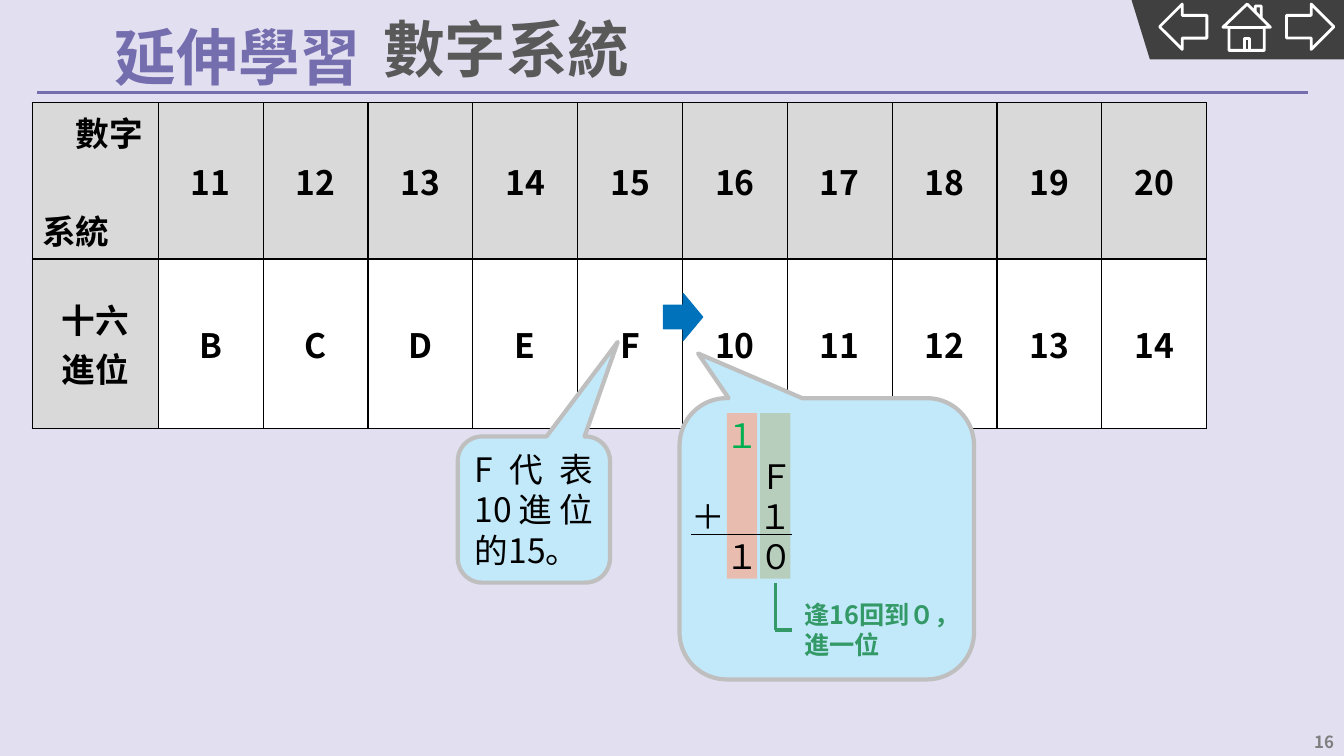
from dataclasses import dataclass
from typing import Any, Optional

from lxml.etree import SubElement
from pptx import Presentation
from pptx.dml.color import RGBColor
from pptx.enum.shapes import MSO_CONNECTOR, MSO_SHAPE
from pptx.enum.text import MSO_ANCHOR, MSO_AUTO_SIZE, PP_ALIGN
from pptx.oxml import parse_xml
from pptx.oxml.ns import nsdecls, qn
from pptx.util import Inches, Pt


@dataclass(frozen=True)
class Theme:
    font: str = "Noto Sans CJK SC"
    back: str = "E2E0F0"
    purple: str = "746DAE"
    title: str = "595959"
    page: str = "7F7F7F"
    dark: str = "404040"
    white: str = "FFFFFF"
    black: str = "000000"
    head: str = "D9D9D9"
    blue: str = "0072BC"
    sky: str = "C2E9FA"
    rim: str = "BFBFBF"
    pink: str = "E8BCAE"
    sage: str = "B8CEBD"
    green: str = "339966"
    carry: str = "00B050"
    big: float = 44
    body: float = 24
    note: float = 18
    small: float = 12


T = Theme()


@dataclass(frozen=True)
class Box:
    left: float
    top: float
    width: float
    height: float

    def emu(self) -> tuple:
        return tuple(Inches(v) for v in (self.left, self.top, self.width, self.height))


@dataclass(frozen=True)
class Form:
    kind: Any
    box: Box
    fill: Optional[str] = None
    line: Optional[str] = None
    weight: float = 0
    turn: float = 0
    flip: bool = False
    tune: tuple = ()


@dataclass(frozen=True)
class Rule:
    start: tuple
    end: tuple
    color: str


@dataclass(frozen=True)
class Line:
    text: str
    size: float = T.body
    color: str = T.black
    bold: bool = False
    under: bool = False
    align: Any = None
    indent: float = 0
    before: float = 0
    pitch: float = 0
    font: str = T.font


def rgb(code: str) -> RGBColor:
    return RGBColor.from_string(code)


def write(frame: Any, lines: list[Line], anchor: Any = MSO_ANCHOR.TOP) -> None:
    frame.word_wrap = True
    frame.vertical_anchor = anchor
    for i, item in enumerate(lines):
        para = frame.paragraphs[0] if i == 0 else frame.add_paragraph()
        para.text = item.text
        if item.indent:
            props = para._p.get_or_add_pPr()
            props.set("marL", str(Inches(item.indent)))
            props.set("indent", "0")
        if item.align is not None:
            para.alignment = item.align
        if item.before:
            para.space_before = Pt(item.before)
        if item.pitch:
            para.line_spacing = Pt(item.pitch)
        font = para.font
        font.size = Pt(item.size)
        font.bold = item.bold
        font.underline = item.under
        font.color.rgb = rgb(item.color)
        font.name = item.font
        style = para._p.pPr.find(qn("a:defRPr"))
        SubElement(style, qn("a:ea")).set("typeface", item.font)


def paint(shape: Any, fill: Optional[str], line: Optional[str], weight: float) -> None:
    shape.shadow.inherit = False
    if fill:
        shape.fill.solid()
        shape.fill.fore_color.rgb = rgb(fill)
    else:
        shape.fill.background()
    if line:
        shape.line.color.rgb = rgb(line)
        shape.line.width = Pt(weight)
    else:
        shape.line.fill.background()


def draw(slide: Any, form: Form) -> Any:
    shape = slide.shapes.add_shape(form.kind, *form.box.emu())
    for i, value in enumerate(form.tune):
        shape.adjustments[i] = value
    shape.rotation = form.turn
    if form.flip:
        shape._element.spPr.xfrm.set("flipV", "1")
    paint(shape, form.fill, form.line, form.weight)
    return shape


def stroke(slide: Any, rule: Rule) -> None:
    ends = [Inches(v) for v in rule.start + rule.end]
    line = slide.shapes.add_connector(MSO_CONNECTOR.STRAIGHT, *ends)
    line.line.color.rgb = rgb(rule.color)
    line.line.width = Pt(2.25)
    SubElement(line._element.spPr, qn("a:effectLst"))


def label(slide: Any, box: Box, lines: list[Line], anchor: Any = MSO_ANCHOR.TOP) -> Any:
    frame = slide.shapes.add_textbox(*box.emu()).text_frame
    write(frame, lines, anchor)
    return frame


def house(slide: Any) -> None:
    walls = [(12.37, 0.04), (12.45, 0.12), (12.45, 0.06), (12.51, 0.06), (12.51, 0.18),
             (12.6, 0.27), (12.54, 0.27), (12.54, 0.5), (12.19, 0.5), (12.19, 0.27),
             (12.13, 0.27), (12.37, 0.04)]
    parts = [walls, [(12.45, 0.12), (12.51, 0.18)], [(12.54, 0.27), (12.19, 0.27)],
             [(12.34, 0.5), (12.34, 0.38), (12.39, 0.38), (12.39, 0.5)]]
    pen = None
    for part in parts:
        first, *rest = [(Inches(x), Inches(y)) for x, y in part]
        if pen is None:
            pen = slide.shapes.build_freeform(*first)
        else:
            pen.move_to(*first)
        pen.add_line_segments(rest, close=part is walls)
    paint(pen.convert_to_shape(), None, T.white, 2)


def grid(slide: Any) -> None:
    heads = [str(n) for n in range(11, 21)]
    codes = [f"{n:X}" for n in range(11, 21)]
    box = Box(0.32, 1.02, 11.65, 3.23)
    table = slide.shapes.add_table(2, 11, *box.emu()).table
    table.first_row = table.horz_banding = False
    for i, col in enumerate(table.columns):
        col.width = Inches(1.04 if i else 1.25)
    for row, height in zip(table.rows, (1.55, 1.68)):
        row.height = Inches(height)
    mid = PP_ALIGN.CENTER
    corner = [Line("數字", bold=True, indent=0.33), Line("系統", bold=True, before=35)]
    side = [Line(text, bold=True, align=mid) for text in ("十六", "進位")]
    for r, (lead, texts) in enumerate(((corner, heads), (side, codes))):
        rows = [lead] + [[Line(text, bold=True, align=mid)] for text in texts]
        for c, lines in enumerate(rows):
            cell = table.cell(r, c)
            top = r == c == 0
            write(cell.text_frame, lines)
            cell.vertical_anchor = MSO_ANCHOR.TOP if top else MSO_ANCHOR.MIDDLE
            cell.fill.solid()
            cell.fill.fore_color.rgb = rgb(T.head if r == 0 or c == 0 else T.white)
            for i, edge in enumerate(("lnL", "lnR", "lnT", "lnB")):
                cell._tc.tcPr.insert(i, parse_xml(
                    f'<a:{edge} {nsdecls("a")} w="{Pt(1)}"><a:solidFill>'
                    f'<a:srgbClr val="{T.black}"/></a:solidFill></a:{edge}>'))


def main() -> None:
    deck = Presentation()
    deck.slide_width, deck.slide_height = Inches(13.33), Inches(7.5)
    slide = deck.slides.add_slide(deck.slide_layouts[5])
    slide.background.fill.solid()
    slide.background.fill.fore_color.rgb = rgb(T.back)

    draw(slide, Form(MSO_SHAPE.PARALLELOGRAM, Box(11.22, -0.01, 2.29, 0.6), T.dark,
                     turn=180, flip=True, tune=(0.308,)))
    for left, turn in ((11.5, 180), (12.76, 0)):
        draw(slide, Form(MSO_SHAPE.RIGHT_ARROW, Box(left, 0.04, 0.47, 0.45),
                         line=T.white, weight=2, turn=turn))
    house(slide)

    tag = label(slide, Box(1.04, 0.08, 2.79, 0.84),
                [Line("延伸學習", T.big, T.purple, True)], MSO_ANCHOR.BOTTOM)
    tag.margin_bottom = 0
    stroke(slide, Rule((0.37, 0.92), (12.97, 0.92), T.purple))
    title = slide.shapes.title
    title.left, title.top, title.width, title.height = Box(3.67, 0.05, 7.56, 0.92).emu()
    frame = title.text_frame
    frame.auto_size = MSO_AUTO_SIZE.NONE
    frame.margin_left = frame.margin_right = Inches(0.13)
    frame.margin_top, frame.margin_bottom = Inches(0.07), Inches(0.15)
    write(frame, [Line("數字系統", T.big, T.title, True, align=PP_ALIGN.LEFT)], MSO_ANCHOR.MIDDLE)
    label(slide, Box(12.9, 7.22, 0.43, 0.28),
          [Line("16", T.small, T.page, True, align=PP_ALIGN.RIGHT, font="Noto Sans CJK TC")],
          MSO_ANCHOR.MIDDLE)

    grid(slide)
    draw(slide, Form(MSO_SHAPE.DOWN_ARROW, Box(6.54, 2.95, 0.47, 0.39), T.blue, T.blue, 0.75, 270))

    bubble = MSO_SHAPE.ROUNDED_RECTANGULAR_CALLOUT
    sum_box = draw(slide, Form(bubble, Box(6.74, 3.95, 2.92, 2.79), T.sky, T.rim, 3,
                               tune=(-0.437, -0.659, 0.167)))
    sum_box.text_frame.margin_right = 0
    sum_box.text_frame.margin_bottom = Inches(0.06)
    write(sum_box.text_frame,
          [Line(text, T.note, T.green, True, align=PP_ALIGN.LEFT, indent=1, pitch=21.6)
           for text in ("逢16回到０，", "進一位")], MSO_ANCHOR.BOTTOM)
    for start, end in (((7.69, 5.78), (7.69, 6.25)), ((7.69, 6.25), (7.86, 6.25))):
        stroke(slide, Rule(start, end, T.green))
    for left, fill in ((7.21, T.pink), (7.54, T.sage)):
        draw(slide, Form(MSO_SHAPE.RECTANGLE, Box(left, 4.1, 0.3, 1.64), fill))
    label(slide, Box(6.43, 4.07, 1.56, 1.72), [
        Line("１", color=T.carry, indent=0.67, pitch=28.8),
        Line("Ｆ", indent=1, pitch=28.8),
        Line("＋　１", under=True, indent=0.33, pitch=28.8),
        Line("１０", indent=0.67, pitch=28.8)])

    hint = draw(slide, Form(bubble, Box(4.54, 4.33, 1.51, 1.45), T.sky, T.rim, 3,
                            tune=(0.551, -1.147, 0.167)))
    write(hint.text_frame, [Line("F代表10進位的15。", align=PP_ALIGN.JUSTIFY, pitch=28.8)],
          MSO_ANCHOR.MIDDLE)
    deck.save("out.pptx")


if __name__ == "__main__":
    main()
